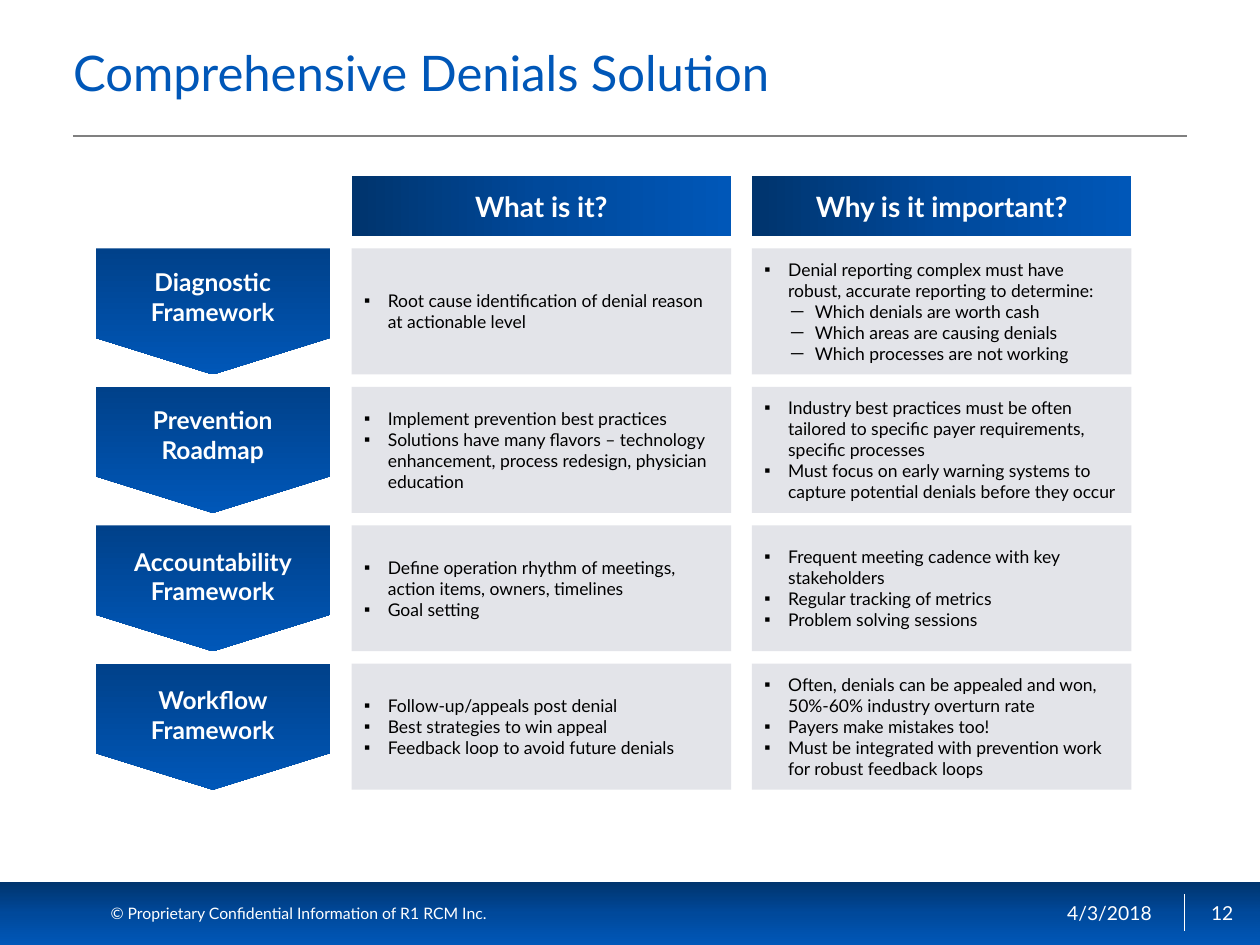
from dataclasses import dataclass

import lxml.etree
import pptx
import pptx.dml.color
import pptx.enum.shapes
import pptx.enum.text
import pptx.oxml.ns
import pptx.util

Cm = pptx.util.Cm
RGB = pptx.dml.color.RGBColor.from_string
Align = pptx.enum.text.PP_ALIGN
Anchor = pptx.enum.text.MSO_ANCHOR
Preset = pptx.enum.shapes.MSO_SHAPE
qn = pptx.oxml.ns.qn


@dataclass(frozen=True)
class Theme:
    font: str = "Lato"
    blue: str = "0057B8"
    white: str = "FFFFFF"
    black: str = "000000"
    rule: str = "808080"
    panel: str = "E3E4E9"
    bar_gradient: tuple[str, ...] = ("00346D", "00499B", "0057B8")
    arrow_gradient: tuple[str, ...] = ("00418A", "0057B8")
    title_size: int = 28
    header_size: int = 16
    label_size: int = 14
    body_size: int = 10
    date_size: int = 11
    copyright_size: int = 9


@dataclass(frozen=True)
class Box:
    """Position and size in centimetres."""
    left: float
    top: float
    width: float
    height: float

    def lengths(self) -> tuple:
        return Cm(self.left), Cm(self.top), Cm(self.width), Cm(self.height)


@dataclass(frozen=True)
class Bullet:
    text: str
    level: int = 0


@dataclass(frozen=True)
class Stage:
    label: str
    label_drop: float
    what: tuple[Bullet, ...]
    why: tuple[Bullet, ...]


THEME = Theme()

# Grid of the matrix
COLUMNS = (7.09, 15.16)
COLUMN_WIDTH = 7.65
HEADER_TOP, HEADER_HEIGHT = 3.55, 1.2
FIRST_ROW, ROW_PITCH, ROW_HEIGHT = 5.01, 2.79, 2.54
ARROW_LEFT, ARROW_WIDTH = 1.93, 4.72
HEADERS = ("What is it?", "Why is it important?")
BULLETS = (("▪", 0.48), ("─", 1.02))  # character and text indent by level
HANGING = 0.48

STAGES = (
    Stage("Diagnostic Framework", 0.25,
          (Bullet("Root cause identification of denial reason at actionable level"),),
          (Bullet("Denial reporting complex must have robust, accurate reporting to determine:"),
           Bullet("Which denials are worth cash", 1),
           Bullet("Which areas are causing denials", 1),
           Bullet("Which processes are not working", 1))),
    Stage("Prevention Roadmap", 0.25,
          (Bullet("Implement prevention best practices"),
           Bullet("Solutions have many flavors – technology enhancement, "
                  "process redesign, physician education")),
          (Bullet("Industry best practices must be often tailored to specific "
                  "payer requirements, specific processes"),
           Bullet("Must focus on early warning systems to capture potential "
                  "denials before they occur"))),
    Stage("Accountability Framework", 0.31,
          (Bullet("Define operation rhythm of meetings, action items, owners, timelines"),
           Bullet("Goal setting")),
          (Bullet("Frequent meeting cadence with key stakeholders"),
           Bullet("Regular tracking of metrics"),
           Bullet("Problem solving sessions"))),
    Stage("Workflow Framework", 0.31,
          (Bullet("Follow-up/appeals post denial"),
           Bullet("Best strategies to win appeal"),
           Bullet("Feedback loop to avoid future denials")),
          (Bullet("Often, denials can be appealed and won, 50%-60% industry overturn rate"),
           Bullet("Payers make mistakes too!"),
           Bullet("Must be integrated with prevention work for robust feedback loops"))),
)


def format_runs(paragraph, size: int, color: str, bold: bool = False) -> None:
    for run in paragraph.runs:
        run.font.name = THEME.font
        run.font.size = pptx.util.Pt(size)
        run.font.bold = bold
        run.font.color.rgb = RGB(color)


def write(shape, text: str, size: int, color: str, align=Align.LEFT,
          anchor=Anchor.MIDDLE, bold: bool = False) -> None:
    frame = shape.text_frame
    frame.word_wrap = True
    frame.vertical_anchor = anchor
    frame.text = text
    frame.paragraphs[0].alignment = align
    format_runs(frame.paragraphs[0], size, color, bold)


def add_text(slide, box: Box, text: str, size: int, **style) -> None:
    write(slide.shapes.add_textbox(*box.lengths()), text, size, THEME.white, **style)


def add_block(slide, box: Box, colors: tuple[str, ...], angle: int = 0,
              preset=Preset.RECTANGLE):
    """Add a borderless shape; several colours make an even gradient."""
    block = slide.shapes.add_shape(preset, *box.lengths())
    block.shadow.inherit = False
    block.line.fill.background()
    if len(colors) == 1:
        block.fill.solid()
        block.fill.fore_color.rgb = RGB(colors[0])
        return block
    block.fill.gradient()
    gradient = block._element.spPr.find(qn("a:gradFill"))
    stops = gradient.find(qn("a:gsLst"))
    for stop in list(stops):
        stops.remove(stop)
    for index, color in enumerate(colors):
        position = str(100000 * index // (len(colors) - 1))
        stop = lxml.etree.SubElement(stops, qn("a:gs"), pos=position)
        lxml.etree.SubElement(stop, qn("a:srgbClr"), val=color)
    gradient.find(qn("a:lin")).set("ang", str(angle * 60000))
    return block


def add_rule(slide, start: tuple[float, float], end: tuple[float, float],
             color: str, width: float) -> None:
    rule = slide.shapes.add_connector(
        pptx.enum.shapes.MSO_CONNECTOR.STRAIGHT, *map(Cm, start + end))
    rule.line.color.rgb = RGB(color)
    rule.line.width = pptx.util.Pt(width)
    lxml.etree.SubElement(rule._element.spPr, qn("a:effectLst"))


def add_panel(slide, box: Box, bullets: tuple[Bullet, ...]) -> None:
    frame = add_block(slide, box, (THEME.panel,)).text_frame
    frame.word_wrap = True
    frame.vertical_anchor = Anchor.MIDDLE
    for index, bullet in enumerate(bullets):
        paragraph = frame.add_paragraph() if index else frame.paragraphs[0]
        paragraph.text = bullet.text
        paragraph.level = bullet.level
        paragraph.alignment = Align.LEFT
        mark, indent = BULLETS[bullet.level]
        properties = paragraph._p.get_or_add_pPr()
        properties.set("marL", str(Cm(indent)))
        properties.set("indent", str(-Cm(HANGING)))
        lxml.etree.SubElement(properties, qn("a:buFont"), typeface="Arial")
        lxml.etree.SubElement(properties, qn("a:buChar"), char=mark)
        format_runs(paragraph, THEME.body_size, THEME.black)


def add_stage(slide, stage: Stage, top: float) -> None:
    # The pentagon is turned to point down, so its sides swap about the centre
    swap = (ARROW_WIDTH - ROW_HEIGHT) / 2
    arrow = add_block(slide, Box(ARROW_LEFT + swap, top - swap, ROW_HEIGHT, ARROW_WIDTH),
                      THEME.arrow_gradient, preset=Preset.PENTAGON)
    arrow.adjustments[0] = 0.29
    arrow.rotation = 90
    add_text(slide, Box(ARROW_LEFT, top + stage.label_drop, ARROW_WIDTH, 1.7),
             stage.label, THEME.label_size, align=Align.CENTER, anchor=Anchor.TOP, bold=True)
    for left, bullets in zip(COLUMNS, (stage.what, stage.why)):
        add_panel(slide, Box(left, top, COLUMN_WIDTH, ROW_HEIGHT), bullets)


def main() -> None:
    deck = pptx.Presentation()
    deck.slide_width, deck.slide_height = Cm(25.4), Cm(19.05)
    slide = deck.slides.add_slide(deck.slide_layouts[5])

    # Title and rule
    title = slide.shapes.title
    title.left, title.top, title.width, title.height = Box(1.22, 0.38, 22.7, 2.36).lengths()
    write(title, "Comprehensive Denials Solution", THEME.title_size, THEME.blue)
    title.text_frame.paragraphs[0].line_spacing = 0.8
    add_rule(slide, (1.47, 2.74), (23.93, 2.74), THEME.rule, 1)

    # Footer
    add_block(slide, Box(0, 17.78, 25.4, 1.27), THEME.bar_gradient, angle=90)
    add_rule(slide, (23.88, 18.03), (23.88, 18.77), THEME.white, 0.75)
    add_text(slide, Box(17.15, 17.86, 6.32, 1.09), "4/3/2018", THEME.date_size, align=Align.RIGHT)
    add_text(slide, Box(23.88, 17.86, 1.52, 1.09), "12", THEME.date_size, align=Align.CENTER)
    add_text(slide, Box(1.98, 18.08, 11.86, 0.64),
             "© Proprietary Confidential Information of R1 RCM Inc.", THEME.copyright_size)

    # Column headers and stages
    for left, header in zip(COLUMNS, HEADERS):
        bar = add_block(slide, Box(left, HEADER_TOP, COLUMN_WIDTH, HEADER_HEIGHT),
                        THEME.bar_gradient)
        write(bar, header, THEME.header_size, THEME.white, align=Align.CENTER, bold=True)
    for row, stage in enumerate(STAGES):
        add_stage(slide, stage, FIRST_ROW + row * ROW_PITCH)

    deck.save("out.pptx")


if __name__ == "__main__":
    main()
